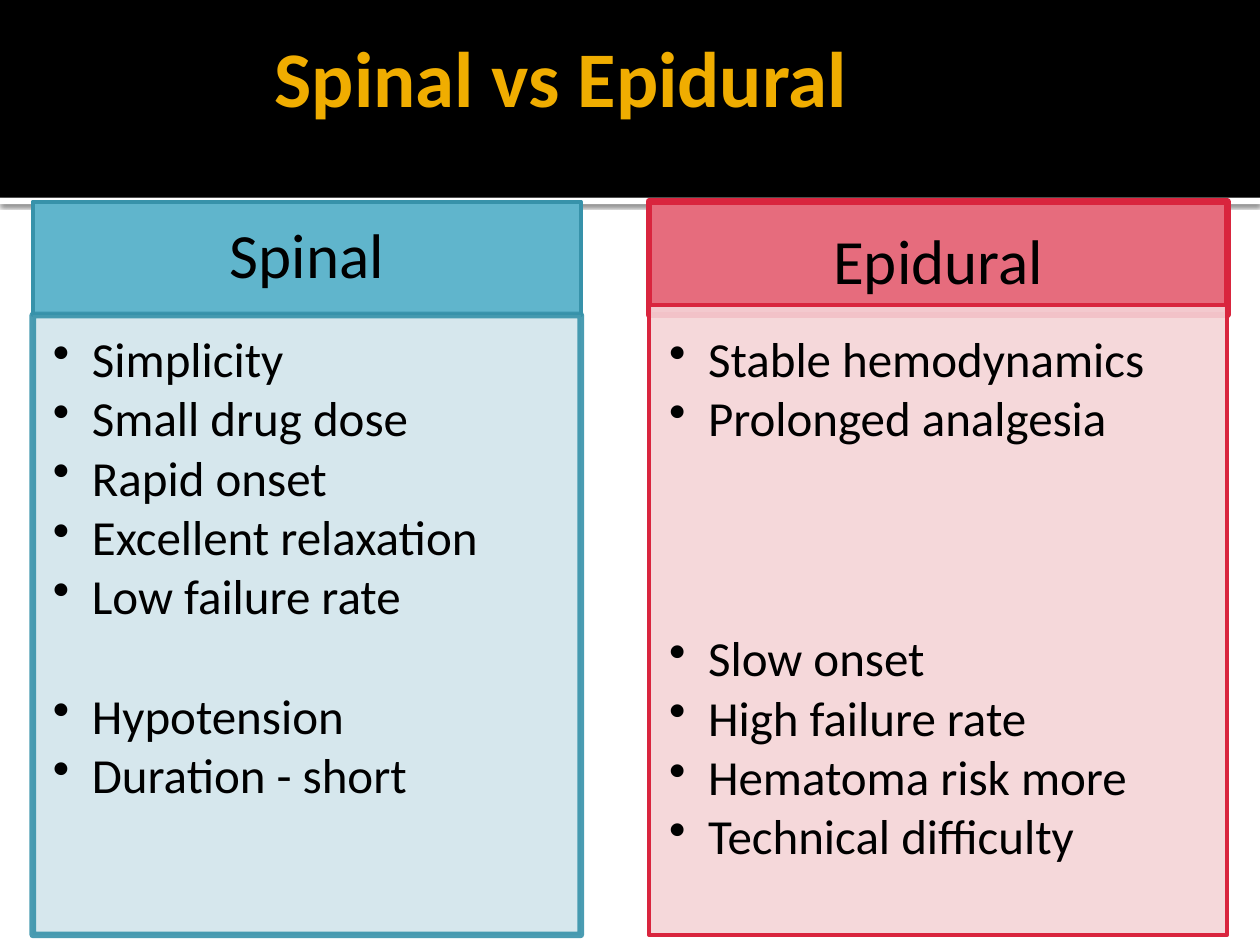
from lxml import etree
from pptx import Presentation
from pptx.dml.color import RGBColor
from pptx.enum.shapes import MSO_SHAPE as SHAPE
from pptx.enum.text import MSO_ANCHOR as ANCHOR, PP_ALIGN as ALIGN
from pptx.oxml import parse_xml
from pptx.oxml.ns import nsdecls, qn
from pptx.util import Inches, Pt

BLACK = RGBColor(0x00, 0x00, 0x00)
WHITE = RGBColor(0xFF, 0xFF, 0xFF)
GOLD = RGBColor(0xF0, 0xAD, 0x00)
BLUE = RGBColor(0x60, 0xB5, 0xCC)
BLUE_DARK = RGBColor(0x37, 0x92, 0xAA)
BLUE_PALE = RGBColor(0xD2, 0xE5, 0xEC)
RED = RGBColor(0xE6, 0x6C, 0x7D)
RED_DARK = RGBColor(0xD9, 0x25, 0x3E)
RED_PALE = RGBColor(0xF5, 0xD4, 0xD7)

FONT = "Calibri"
THIN, THICK = 2.25, 3.78
BAND_H = 1.57
HEAD_TOP, HEAD_H = 1.6, 0.9
BODY_BOTTOM = 7.42
LIST_TOP = 2.66
INDENT = 0.31
AFTER = 3.65   # points after each list item
LINE = 34.4    # points from one list item to the next

# left, width, heading, heading top inset, body top, colours, line widths, and
# item groups, each with the number of list lines left free above it
COLUMNS = [
    dict(left=0.26, width=4.35, heading="Spinal", inset=0.16, body_top=2.5,
         colors=(BLUE, BLUE_PALE, BLUE_DARK), lines=(THIN, THICK), line_alpha=90,
         groups=[(0, ["Simplicity", "Small drug dose", "Rapid onset",
                      "Excellent relaxation", "Low failure rate"]),
                 (1, ["Hypotension", "Duration - short"])]),
    dict(left=5.15, width=4.59, heading="Epidural", inset=0.25, body_top=2.42,
         colors=(RED, RED_PALE, RED_DARK), lines=(THICK, THIN), line_alpha=100,
         groups=[(0, ["Stable hemodynamics", "Prolonged analgesia"]),
                 (3, ["Slow onset", "High failure rate",
                      "Hematoma risk more", "Technical difficulty"])]),
]


def set_alpha(fill_parent, percent):
    color = fill_parent.find(qn("a:solidFill"))[0]
    etree.SubElement(color, qn("a:alpha")).set("val", str(percent * 1000))


def add_box(slide, left, top, width, height, fill, line=None, weight=0):
    sp = slide.shapes.add_shape(SHAPE.RECTANGLE, Inches(left), Inches(top),
                                Inches(width), Inches(height))
    sp.shadow.inherit = False
    sp.fill.solid()
    sp.fill.fore_color.rgb = fill
    if line is None:
        sp.line.fill.background()
    else:
        sp.line.color.rgb = line
        sp.line.width = Pt(weight)
    return sp


def set_insets(tf, left, top, right, bottom):
    tf.margin_left, tf.margin_top = Inches(left), Inches(top)
    tf.margin_right, tf.margin_bottom = Inches(right), Inches(bottom)
    tf.word_wrap = True


def write(p, text, size, color=BLACK, bold=False, align=ALIGN.LEFT):
    p.text = text
    p.alignment = align
    font = p.runs[0].font
    font.name, font.size, font.bold = FONT, Pt(size), bold
    font.color.rgb = color


def add_bullet(p):
    pPr = p._p.get_or_add_pPr()
    pPr.set("marL", str(Inches(INDENT)))
    pPr.set("indent", str(-Inches(INDENT)))
    etree.SubElement(pPr, qn("a:buChar")).set("char", "•")


def add_bands(slide, width):
    # White strip whose shadow falls below the black title band
    strip = add_box(slide, 0, BAND_H, width, 0.05, WHITE)
    effects = strip._element.spPr.find(qn("a:effectLst"))
    effects.append(parse_xml(
        f'<a:outerShdw {nsdecls("a")} blurRad="{Pt(2.5)}" dist="{Pt(0.8)}" '
        'dir="5400000" rotWithShape="0"><a:srgbClr val="000000">'
        '<a:alpha val="60000"/></a:srgbClr></a:outerShdw>'))
    add_box(slide, 0, 0, width, BAND_H, BLACK)


def add_title(slide, text):
    title = slide.shapes.title
    title.left, title.top = Inches(2.08), Inches(-0.08)
    title.width, title.height = Inches(6.83), Inches(1.37)
    tf = title.text_frame
    set_insets(tf, 0.1, 0.05, 0.05, 0.05)
    tf.vertical_anchor = ANCHOR.MIDDLE
    write(tf.paragraphs[0], text, 45, GOLD, bold=True)
    # Bring the title in front of the bands
    slide.shapes._spTree.append(title._element)


def add_heading(slide, col):
    fill, _, line = col["colors"]
    sp = add_box(slide, col["left"], HEAD_TOP, col["width"], HEAD_H,
                 fill, line, col["lines"][0])
    tf = sp.text_frame
    set_insets(tf, 0.28, col["inset"], 0.28, 0.16)
    tf.vertical_anchor = ANCHOR.MIDDLE
    p = tf.paragraphs[0]
    write(p, col["heading"], 36, align=ALIGN.CENTER)
    p.line_spacing = 0.9


def add_list(slide, col):
    _, fill, line = col["colors"]
    top = col["body_top"]
    sp = add_box(slide, col["left"], top, col["width"], BODY_BOTTOM - top,
                 fill, line, col["lines"][1])
    set_alpha(sp._element.spPr, 90)
    if col["line_alpha"] < 100:
        set_alpha(sp._element.spPr.find(qn("a:ln")), col["line_alpha"])
    tf = sp.text_frame
    set_insets(tf, 0.16, LIST_TOP - top, 0.22, 0.24)
    tf.vertical_anchor = ANCHOR.TOP
    p = None
    for free_lines, items in col["groups"]:
        for i, item in enumerate(items):
            p = tf.paragraphs[0] if p is None else tf.add_paragraph()
            write(p, item, 28)
            p.line_spacing = 0.9
            p.space_before = Pt(free_lines * LINE if i == 0 else 0)
            p.space_after = Pt(AFTER)
            add_bullet(p)


def main():
    prs = Presentation()
    prs.slide_width, prs.slide_height = Inches(10), Inches(7.5)
    slide = prs.slides.add_slide(prs.slide_layouts[5])
    add_bands(slide, 10)
    add_title(slide, "Spinal vs Epidural")
    for col in COLUMNS:
        add_heading(slide, col)
        add_list(slide, col)
    prs.save("out.pptx")


if __name__ == "__main__":
    main()
